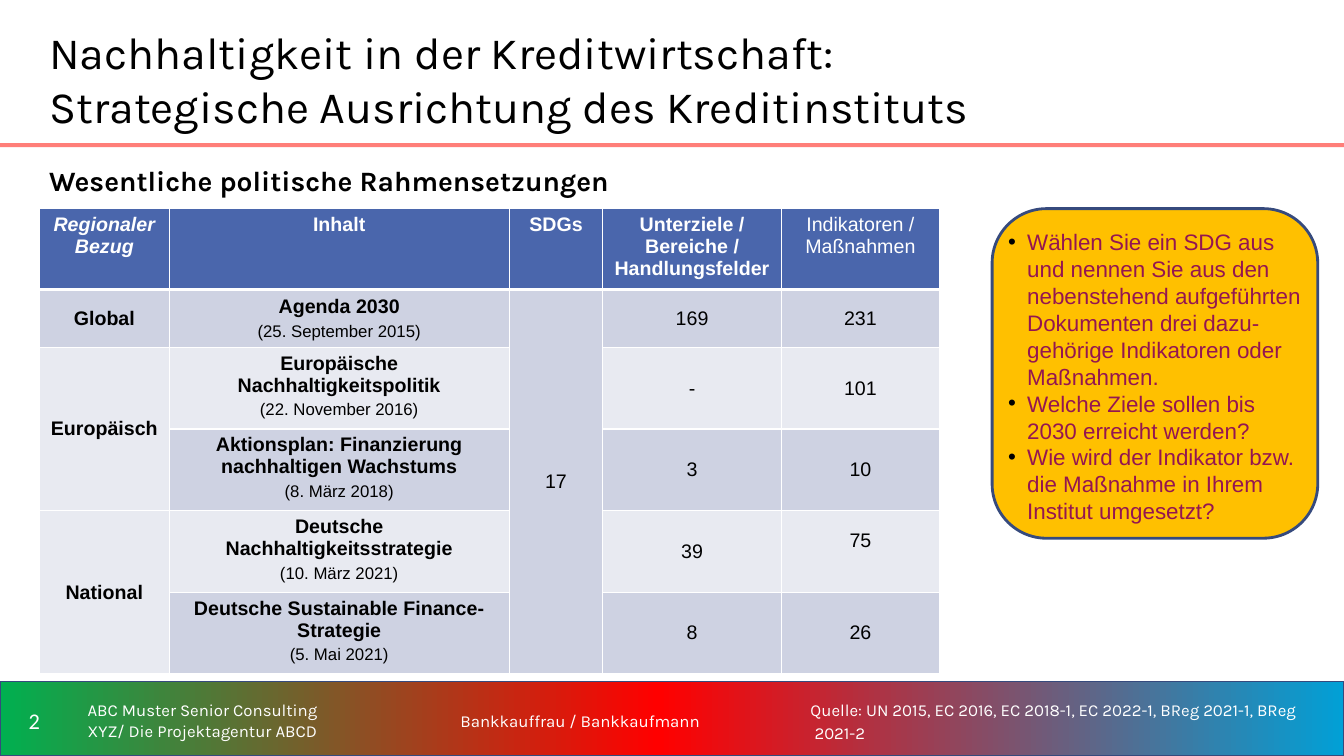
from dataclasses import dataclass

from lxml.etree import SubElement
from pptx import Presentation
from pptx.dml.color import RGBColor
from pptx.enum.shapes import MSO_SHAPE
from pptx.enum.text import MSO_ANCHOR, PP_ALIGN
from pptx.oxml.ns import qn
from pptx.util import Inches, Pt


@dataclass(frozen=True)
class Theme:
    heading_font: str = "Karla"
    body_font: str = "Arial"
    number_font: str = "Calibri"
    black: str = "000000"
    white: str = "FFFFFF"
    rule: str = "FF7E79"
    outline: str = "364A7D"
    header: str = "4A66AC"
    band_dark: str = "CED2E2"
    band_light: str = "E8EAF1"
    task_fill: str = "FFC000"
    task_text: str = "941651"
    footer_stops: tuple = ((0, "00B050"), (49, "FF0000"), (100, "01A0D6"))
    title_size: float = 32
    subtitle_size: float = 20
    task_size: float = 16
    cell_size: float = 14
    small_size: float = 12


def rgb(value):
    return RGBColor.from_string(value)


def write(p, text, font, size, color, bold=False, italic=False,
          align=PP_ALIGN.LEFT, spacing=None, before=None, hang=0, bullet=None):
    """Fill a paragraph; hang is the hanging indent in inches."""
    pPr = p._p.get_or_add_pPr()
    if hang:
        pPr.set("marL", str(Inches(hang)))
        pPr.set("indent", str(-Inches(hang)))
    if bullet:
        clr = SubElement(pPr, qn("a:buClr"))
        SubElement(clr, qn("a:srgbClr"), val=bullet)
        SubElement(pPr, qn("a:buFont"), typeface="Arial")
        SubElement(pPr, qn("a:buChar"), char="•")
    p.alignment = align
    if spacing:
        p.line_spacing = spacing
    if before:
        p.space_before = Pt(before)
    p.text = text
    for r in p.runs:
        f = r.font
        f.name, f.size, f.bold, f.italic = font, Pt(size), bold, italic
        f.color.rgb = rgb(color)


class SlideBuilder:
    def __init__(self, slide, theme):
        self.slide = slide
        self.theme = theme

    def shape(self, kind, box, fill=None, line=None, width=1):
        sp = self.slide.shapes.add_shape(kind, *map(Inches, box))
        sp.shadow.inherit = False
        if fill:
            sp.fill.solid()
            sp.fill.fore_color.rgb = rgb(fill)
        if line:
            sp.line.color.rgb = rgb(line)
            sp.line.width = Pt(width)
        else:
            sp.line.fill.background()
        return sp

    def gradient_bar(self, box, stops):
        sp = self.shape(MSO_SHAPE.RECTANGLE, box, line=self.theme.outline)
        sp.fill.gradient()
        sp.fill.gradient_angle = 0
        gs_list = sp._element.spPr.find(".//" + qn("a:gsLst"))
        for gs in list(gs_list):
            gs_list.remove(gs)
        for pos, color in stops:
            gs = SubElement(gs_list, qn("a:gs"), pos=str(pos * 1000))
            SubElement(gs, qn("a:srgbClr"), val=color)

    def text(self, box, text, size, color, font=None,
             anchor=MSO_ANCHOR.TOP, **fmt):
        tf = self.slide.shapes.add_textbox(*map(Inches, box)).text_frame
        tf.word_wrap = True
        tf.vertical_anchor = anchor
        write(tf.paragraphs[0], text, font or self.theme.heading_font, size, color, **fmt)

    def footer(self, left, width, text, size=None, **fmt):
        self.text((left, 6.84, width, 0.61), text, size or self.theme.small_size,
                  self.theme.white, anchor=MSO_ANCHOR.MIDDLE, **fmt)

    def task_box(self, box, tasks):
        t = self.theme
        sp = self.shape(MSO_SHAPE.ROUNDED_RECTANGLE, box, t.task_fill, t.outline, 2)
        sp.adjustments[0] = 0.167
        tf = sp.text_frame
        tf.word_wrap = True
        tf.vertical_anchor = MSO_ANCHOR.TOP
        tf.margin_left = tf.margin_right = tf.margin_bottom = 0
        tf.margin_top = Inches(0.04)
        for i, task in enumerate(tasks):
            p = tf.add_paragraph() if i else tf.paragraphs[0]
            write(p, task, t.body_font, t.task_size, t.task_text,
                  hang=0.19, bullet=t.black)

    def cell(self, cell, lines, fill, color, anchor, top=1, bottom=1, **fmt):
        """Write a cell; a second line is set small and regular."""
        t = self.theme
        tcPr = cell._tc.get_or_add_tcPr()
        for side, width in zip("LRTB", (1, 1, top, bottom)):
            ln = SubElement(tcPr, qn(f"a:ln{side}"), w=str(Pt(width)))
            SubElement(SubElement(ln, qn("a:solidFill")), qn("a:srgbClr"), val=t.white)
        cell.fill.solid()
        cell.fill.fore_color.rgb = rgb(fill)
        cell.vertical_anchor = anchor
        tf = cell.text_frame
        for i, line in enumerate(lines):
            p = tf.add_paragraph() if i else tf.paragraphs[0]
            style = {"before": 3} if i else fmt
            write(p, line, t.body_font, t.small_size if i else t.cell_size,
                  color, align=PP_ALIGN.CENTER, **style)

    def table(self, left, top, widths, heights, header, rows, merges):
        t = self.theme
        frame = self.slide.shapes.add_table(
            len(heights), len(widths), Inches(left), Inches(top),
            Inches(sum(widths)), Inches(sum(heights)))
        tbl = frame.table
        tbl.horz_banding = False
        for col, width in zip(tbl.columns, widths):
            col.width = Inches(width)
        for row, height in zip(tbl.rows, heights):
            row.height = Inches(height)
        for c, label in enumerate(header):
            self.cell(tbl.cell(0, c), [label], t.header, t.white, MSO_ANCHOR.TOP,
                      bottom=3, bold=c < len(header) - 1, italic=c == 0)
        for r, row in enumerate(rows, 1):
            fill = t.band_dark if r % 2 else t.band_light
            for c, value in enumerate(row):
                anchor = MSO_ANCHOR.TOP if c == 1 and r > 1 else MSO_ANCHOR.MIDDLE
                self.cell(tbl.cell(r, c), value.split("\n") if value else [], fill,
                          t.black, anchor, top=3 if r == 1 else 1, bold=c < 2)
        for first, last in merges:
            tbl.cell(*first).merge(tbl.cell(*last))
        return tbl


HEADER = ["Regionaler Bezug", "Inhalt", "SDGs",
          "Unterziele / Bereiche / Handlungsfelder", "Indikatoren / Maßnahmen"]
ROWS = [
    ["Global", "Agenda 2030\n(25. September 2015)", "17", "169", "231"],
    ["Europäisch", "Europäische Nachhaltigkeitspolitik\n(22. November 2016)", "", "-", "101"],
    ["", "Aktionsplan: Finanzierung nachhaltigen Wachstums\n(8. März 2018)", "", "3", "10"],
    ["National", "Deutsche Nachhaltigkeitsstrategie\n(10. März 2021)", "", "39", "75"],
    ["", "Deutsche Sustainable Finance-Strategie\n(5. Mai 2021)", "", "8", "26"],
]
MERGES = [((1, 2), (5, 2)), ((2, 0), (3, 0)), ((4, 0), (5, 0))]
TASKS = [
    "Wählen Sie ein SDG aus und nennen Sie aus den nebenstehend aufgeführten "
    "Dokumenten drei dazu-gehörige Indikatoren oder Maßnahmen.",
    "Welche Ziele sollen bis 2030 erreicht werden?",
    "Wie wird der Indikator bzw. die Maßnahme in Ihrem Institut umgesetzt?",
]


def main():
    prs = Presentation()
    prs.slide_width, prs.slide_height = Inches(13.33), Inches(7.5)
    t = Theme()
    b = SlideBuilder(prs.slides.add_slide(prs.slide_layouts[6]), t)

    b.gradient_bar((0, 6.76, 13.33, 0.74), t.footer_stops)
    b.shape(MSO_SHAPE.RECTANGLE, (0, 1.42, 13.33, 0.04), t.rule)
    b.text((0.39, 0.2, 12.6, 1.18),
           "Nachhaltigkeit in der Kreditwirtschaft:\n"
           "Strategische Ausrichtung des Kreditinstituts", t.title_size, t.black)
    b.text((0.39, 1.57, 12.6, 0.44), "Wesentliche politische Rahmensetzungen",
           t.subtitle_size, t.black, bold=True)

    tbl = b.table(0.39, 2.07, [1.29, 3.37, 0.93, 1.77, 1.57],
                  [0.8, 0.57] + [0.81] * 4, HEADER, ROWS, MERGES)
    tbl.cell(4, 4).margin_bottom = Inches(0.27)
    b.task_box((9.84, 2.07, 3.23, 3.27), TASKS)

    b.footer(0, 0.68, "2", t.task_size, font=t.number_font, align=PP_ALIGN.CENTER)
    b.footer(0.77, 2.78, "ABC Muster Senior Consulting\nXYZ/ Die Projektagentur ABCD")
    b.footer(3.66, 4.19, "Bankkauffrau / Bankkaufmann", align=PP_ALIGN.CENTER, spacing=1.1)
    b.footer(7.94, 5.05,
             "Quelle: UN 2015, EC 2016, EC 2018-1, EC 2022-1, BReg 2021-1, BReg 2021-2",
             spacing=1.1, hang=0.04)
    prs.save("out.pptx")


if __name__ == "__main__":
    main()
